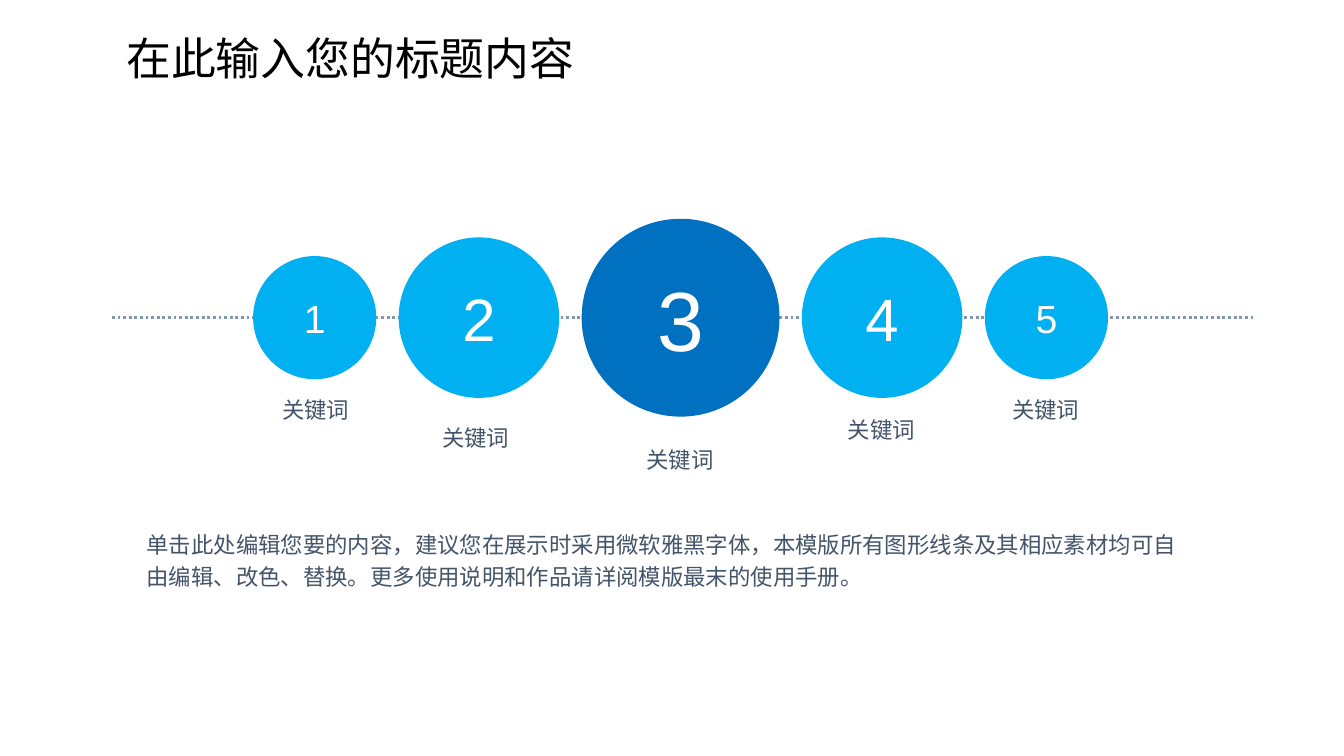
from dataclasses import dataclass

from lxml import etree
from pptx import Presentation
from pptx.dml.color import RGBColor
from pptx.enum import dml, shapes, text
from pptx.oxml import ns
from pptx.util import Pt

FONT = "Arial"
BLACK, WHITE, SLATE = "000000", "FFFFFF", "445469"
SKY, BLUE, LINE_GREY = "00B0F0", "0070C0", "8497B0"

AXIS_Y = 170.2
FIRST_LEFT = 135.6
GAP = 12
TITLE = "在此输入您的标题内容"
BODY = (
    "单击此处编辑您要的内容，建议您在展示时采用微软雅黑字体，"
    "本模版所有图形线条及其相应素材均可自由编辑、改色、替换。"
    "更多使用说明和作品请详阅模版最末的使用手册。"
)


@dataclass(frozen=True)
class Step:
    number: str
    diameter: float
    size: float
    fill: str
    keyword: str
    keyword_left: float
    keyword_top: float


STEPS = [
    Step("1", 66, 21, SKY, "关键词", 151.2, 212.4),
    Step("2", 86, 32, SKY, "关键词", 236.9, 227.5),
    Step("3", 106, 45, BLUE, "关键词", 346.3, 239),
    Step("4", 86, 32, SKY, "关键词", 454.3, 223.2),
    Step("5", 66, 21, SKY, "关键词", 542.2, 212.4),
]


def color(value: str) -> RGBColor:
    return RGBColor.from_string(value)


def write(shape, content: str, size: float, ink: str, align, anchor,
          margins: tuple[float, float] = (0, 0), spacing: float = 1.0) -> None:
    """Fill a shape with one paragraph; margins are horizontal, vertical."""
    frame = shape.text_frame
    frame.text = content
    frame.word_wrap = True
    frame.auto_size = text.MSO_AUTO_SIZE.NONE
    frame.vertical_anchor = anchor
    frame.margin_left = frame.margin_right = Pt(margins[0])
    frame.margin_top = frame.margin_bottom = Pt(margins[1])
    paragraph = frame.paragraphs[0]
    paragraph.alignment = align
    paragraph.line_spacing = spacing
    for run in paragraph.runs:
        run.font.name = FONT
        run.font.size = Pt(size)
        run.font.color.rgb = color(ink)


def add_title(slide) -> None:
    title = slide.shapes.title
    title.left, title.top, title.width, title.height = Pt(60.5), Pt(13), Pt(294.5), Pt(36)
    write(title, TITLE, 24, BLACK, text.PP_ALIGN.LEFT, text.MSO_ANCHOR.TOP, (7.2, 3.6))


def add_axis(slide) -> None:
    axis = slide.shapes.add_connector(
        shapes.MSO_CONNECTOR.STRAIGHT, Pt(60), Pt(AXIS_Y), Pt(672), Pt(AXIS_Y))
    axis.line.color.rgb = color(LINE_GREY)
    axis.line.width = Pt(1.5)
    axis.line.dash_style = dml.MSO_LINE.ROUND_DOT
    etree.SubElement(axis._element.spPr, ns.qn("a:effectLst"))


def add_circle(slide, step: Step, left: float) -> None:
    circle = slide.shapes.add_shape(
        shapes.MSO_SHAPE.OVAL, Pt(left), Pt(AXIS_Y - step.diameter / 2),
        Pt(step.diameter), Pt(step.diameter))
    circle.shadow.inherit = False
    circle.fill.solid()
    circle.fill.fore_color.rgb = color(step.fill)
    circle.line.fill.background()
    write(circle, step.number, step.size, WHITE,
          text.PP_ALIGN.CENTER, text.MSO_ANCHOR.MIDDLE, (5, 2.9))


def add_text(slide, content: str, left: float, top: float,
             width: float, height: float, spacing: float = 1.0) -> None:
    box = slide.shapes.add_textbox(Pt(left), Pt(top), Pt(width), Pt(height))
    write(box, content, 12, SLATE, text.PP_ALIGN.LEFT, text.MSO_ANCHOR.TOP, spacing=spacing)


def main() -> None:
    presentation = Presentation()
    presentation.slide_width, presentation.slide_height = Pt(720), Pt(405)
    slide = presentation.slides.add_slide(presentation.slide_layouts.get_by_name("Title Only"))

    add_title(slide)
    add_axis(slide)
    left = FIRST_LEFT
    for step in STEPS:
        add_circle(slide, step, left)
        left += step.diameter + GAP
    add_text(slide, BODY, 78.5, 281.5, 563, 33, spacing=1.2)
    for step in STEPS:
        add_text(slide, step.keyword, step.keyword_left, step.keyword_top, 50.4, 14.4)

    presentation.save("out.pptx")


if __name__ == "__main__":
    main()
